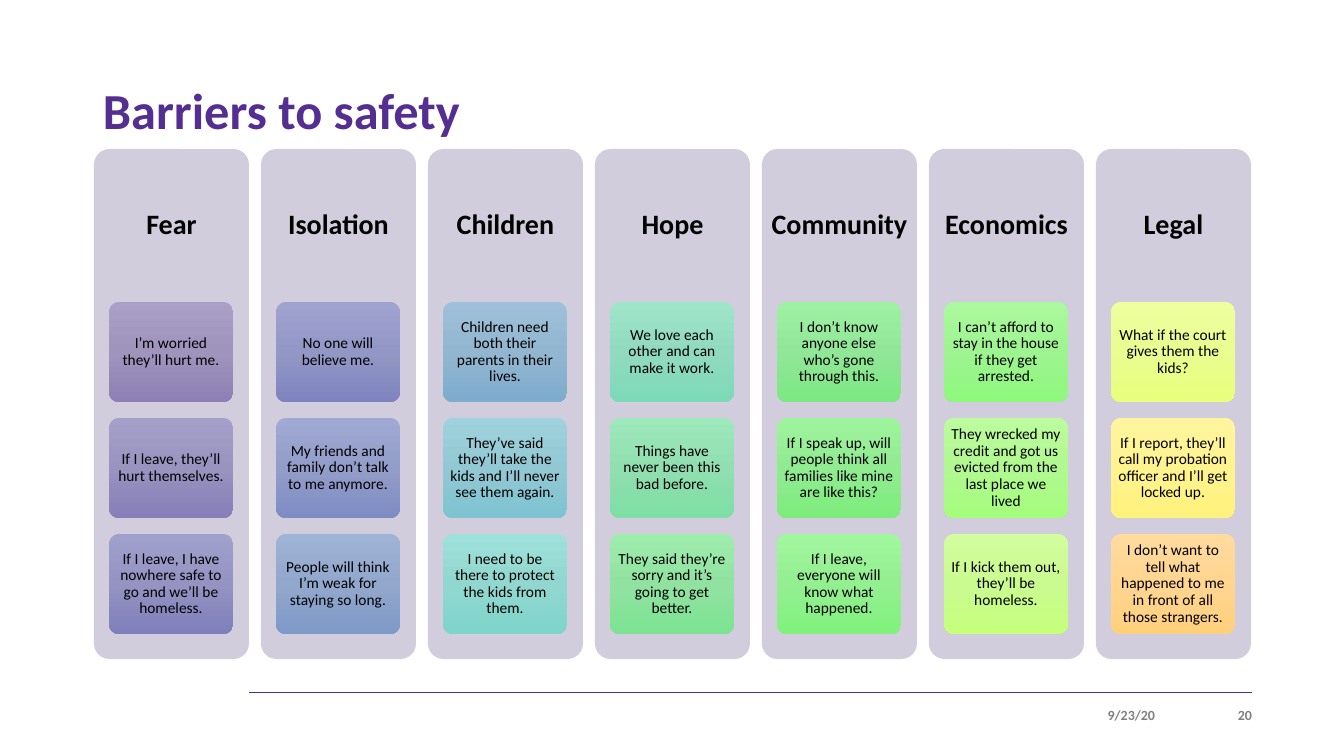
from copy import deepcopy
from dataclasses import dataclass

from pptx import Presentation
from pptx.dml.color import RGBColor
from pptx.enum.shapes import MSO_CONNECTOR, MSO_SHAPE
from pptx.enum.text import MSO_ANCHOR, MSO_AUTO_SIZE, PP_ALIGN
from pptx.oxml.ns import qn
from pptx.oxml.xmlchemy import OxmlElement
from pptx.util import Pt

SLIDE_W, SLIDE_H = 1344, 756
EMU_PER_PX = 12192000 / SLIDE_W
FONT = "Calibri"
PURPLE, GREY, BLACK, PANEL = "542E91", "808080", "000000", "D1CDDC"

COL_X, COL_Y, COL_W, COL_H, COL_PITCH = 94, 149, 155, 510, 167
HEAD_H = 153
CARD_DX, CARD_Y, CARD_W, CARD_H, CARD_PITCH = 15, 302, 124, 100, 116


@dataclass
class Card:
    text: str
    stops: tuple[str, str, str]


@dataclass
class Barrier:
    name: str
    cards: list[Card]


BARRIERS = [
    Barrier("Fear", [
        Card("I’m worried they’ll hurt me.", ("AAA0C7", "9E94BC", "8E80B5")),
        Card("If I leave, they’ll hurt themselves.", ("A5A0CA", "9893BF", "867FB9")),
        Card("If I leave, I have nowhere safe to go and we’ll be homeless.",
             ("A0A0CD", "9493C2", "7F7FBC")),
    ]),
    Barrier("Isolation", [
        Card("No one will believe me.", ("A0A3D0", "9397C5", "7F84C0")),
        Card("My friends and family don’t talk to me anymore.",
             ("9FA9D3", "939DC9", "7E8CC4")),
        Card("People will think I’m weak for staying so long.",
             ("9FB3D6", "92A7CC", "7E9AC8")),
    ]),
    Barrier("Children", [
        Card("Children need both their parents in their lives.",
             ("9FC0DA", "92B6CF", "7EACCD")),
        Card("They’ve said they’ll take the kids and I’ll never see them again.",
             ("9FD2DD", "92C8D3", "7DC3D1")),
        Card("I need to be there to protect the kids from them.",
             ("9EE1DA", "92D7CF", "7DD5CC")),
    ]),
    Barrier("Hope", [
        Card("We love each other and can make it work.", ("9EE5CA", "91DABF", "7DDAB8")),
        Card("Things have never been this bad before.", ("9EE9BB", "91DEB0", "7DDFA4")),
        Card("They said they’re sorry and it’s going to get better.",
             ("9EEDAD", "91E2A1", "7CE392")),
    ]),
    Barrier("Community", [
        Card("I don’t know anyone else who’s gone through this.",
             ("9EF1A3", "91E797", "7CE883")),
        Card("If I speak up, will people think all families like mine are like this?",
             ("9EF49E", "91EB91", "7CED7C")),
        Card("If I leave, everyone will know what happened.",
             ("A1F79E", "94EF91", "80F27C")),
    ]),
    Barrier("Economics", [
        Card("I can’t afford to stay in the house if they get arrested.",
             ("ABF99E", "9EF490", "8DF87C")),
        Card("They wrecked my credit and got us evicted from the last place we lived",
             ("BCFB9E", "B1F890", "A5FD7C")),
        Card("If I kick them out, they’ll be homeless.", ("D2FD9E", "CAFB90", "C5FF7C")),
    ]),
    Barrier("Legal", [
        Card("What if the court gives them the kids?", ("EDFF9E", "E9FD90", "E8FF7C")),
        Card("If I report, they’ll call my probation officer and I’ll get locked up.",
             ("FFF59E", "FFF390", "FFF27C")),
        Card("I don’t want to tell what happened to me in front of all those strangers.",
             ("FFDB9E", "FFD590", "FFD07C")),
    ]),
]


def px(n: int) -> int:
    return round(n * EMU_PER_PX)


def box(x: int, y: int, w: int, h: int) -> tuple[int, int, int, int]:
    return px(x), px(y), px(w), px(h)


def rgb(color: str) -> RGBColor:
    return RGBColor.from_string(color)


def write(sp, text: str, size: int, color: str = BLACK, bold: bool = False,
          align=PP_ALIGN.CENTER, pad_x: int = 0, pad_y: int = 0,
          spacing: float = 0.9) -> None:
    tf = sp.text_frame
    tf.word_wrap = True
    tf.auto_size = MSO_AUTO_SIZE.NONE
    tf.vertical_anchor = MSO_ANCHOR.MIDDLE
    tf.margin_left = tf.margin_right = px(pad_x)
    tf.margin_top = tf.margin_bottom = px(pad_y)
    p = tf.paragraphs[0]
    p.alignment = align
    p.line_spacing = spacing
    r = p.add_run()
    r.text = text
    r.font.name = FONT
    r.font.size = Pt(size)
    r.font.bold = bold
    r.font.color.rgb = rgb(color)


def add_panel(s, x: int, y: int, w: int, h: int):
    sp = s.shapes.add_shape(MSO_SHAPE.ROUNDED_RECTANGLE, *box(x, y, w, h))
    sp.adjustments[0] = 0.1
    sp.shadow.inherit = False
    sp.line.fill.background()
    return sp


def fill_gradient(sp, colors: tuple[str, str, str]) -> None:
    sp.fill.gradient()
    sp.fill.gradient_angle = 270
    first = sp.fill._xPr.find(f".//{qn('a:gs')}")
    first.addnext(deepcopy(first))
    for i, (stop, color) in enumerate(zip(sp.fill.gradient_stops, colors)):
        stop.position = i / 2
        stop.color.rgb = rgb(color)


def add_barrier(s, barrier: Barrier, x: int) -> None:
    panel = add_panel(s, x, COL_Y, COL_W, COL_H)
    panel.fill.solid()
    panel.fill.fore_color.rgb = rgb(PANEL)
    head = s.shapes.add_textbox(*box(x, COL_Y, COL_W, HEAD_H))
    write(head, barrier.name, 20, bold=True, pad_x=8, pad_y=8)
    for i, card in enumerate(barrier.cards):
        sp = add_panel(s, x + CARD_DX, CARD_Y + i * CARD_PITCH, CARD_W, CARD_H)
        fill_gradient(sp, card.stops)
        write(sp, card.text, 11, pad_x=3, pad_y=2)


def add_footer(s) -> None:
    line = s.shapes.add_connector(
        MSO_CONNECTOR.STRAIGHT, px(249), px(692), px(1252), px(692))
    line.line.color.rgb = rgb(PURPLE)
    line.line.width = Pt(0.5)
    line._element.spPr.append(OxmlElement("a:effectLst"))
    for text, x, w in (("9/23/20", 853, 302), ("20", 1172, 80)):
        sp = s.shapes.add_textbox(*box(x, 701, w, 28))
        write(sp, text, 10, GREY, True, PP_ALIGN.RIGHT, pad_y=5, spacing=1.0)


def main() -> None:
    prs = Presentation()
    prs.slide_width, prs.slide_height = px(SLIDE_W), px(SLIDE_H)
    s = prs.slides.add_slide(prs.slide_layouts[5])
    title = s.shapes.title
    title.left, title.top, title.width, title.height = box(93, 40, 1159, 146)
    write(title, "Barriers to safety", 36, PURPLE, True, PP_ALIGN.LEFT, 10, 5)
    add_footer(s)
    for i, barrier in enumerate(BARRIERS):
        add_barrier(s, barrier, COL_X + i * COL_PITCH)
    prs.save("out.pptx")


if __name__ == "__main__":
    main()
